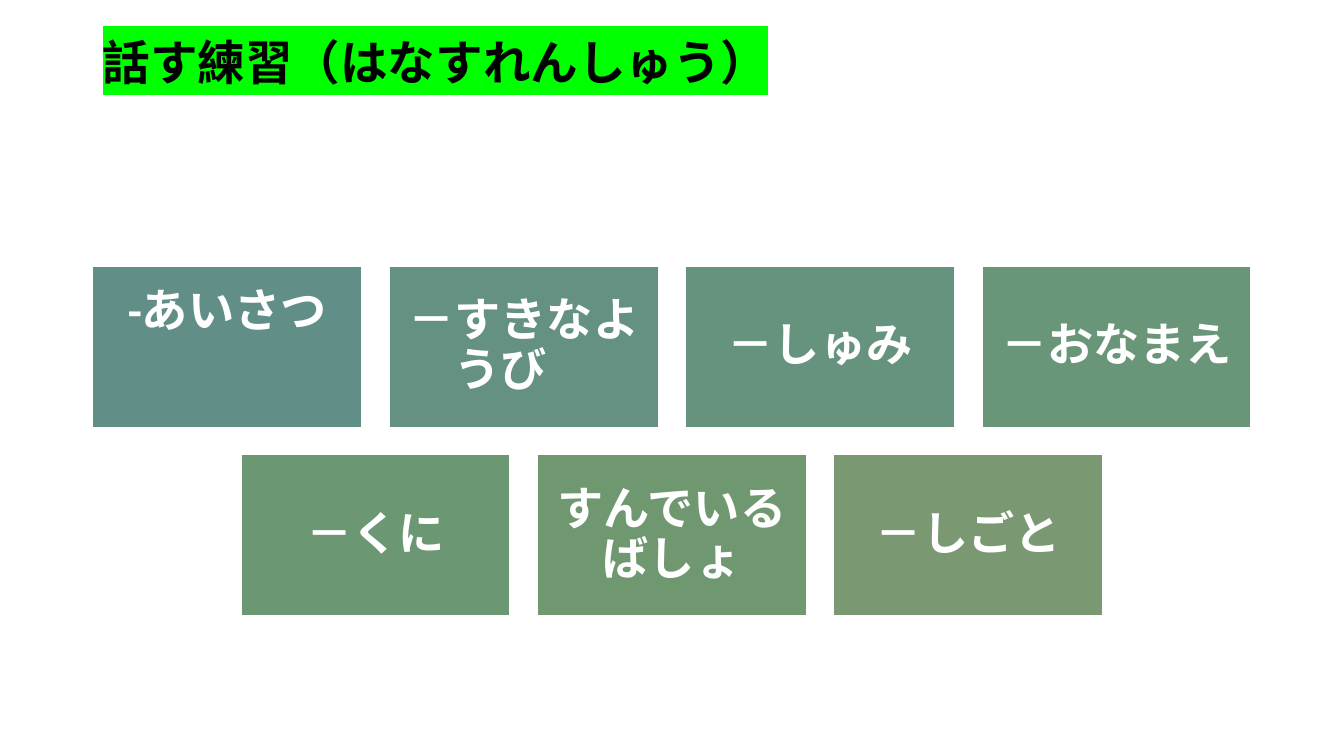
from lxml.etree import SubElement
from pptx import Presentation
from pptx.dml.color import RGBColor
from pptx.enum.shapes import MSO_SHAPE
from pptx.enum.text import MSO_ANCHOR, PP_ALIGN
from pptx.oxml.ns import qn
from pptx.util import Inches, Pt

# Content
TITLE = "話す練習（はなすれんしゅう）"
TOPIC_ROWS = [
    [("-あいさつ", "618F88"), ("－すきなようび　", "649182"),
     ("－しゅみ", "66937D"), ("－おなまえ", "699578")],
    [("－くに", "6C9773"), ("すんでいるばしょ", "709870"), ("－しごと", "7A9973")],
]
RAISED_TOPIC = "-あいさつ"

# Layout in inches
SLIDE_W, SLIDE_H = 13.33, 7.5
CARD_W, CARD_H, GAP = 2.67, 1.6, 0.27
CARDS_TOP = 2.64
INSET, RAISED_INSET = 0.14, 0.82


def color(hex_string):
    return RGBColor.from_string(hex_string)


def style_font(font, size, hex_string):
    font.name, font.size, font.bold = "Calibri", Pt(size), True
    font.color.rgb = color(hex_string)


def add_title(slide):
    title = slide.shapes.add_textbox(Inches(0.92), Inches(0.06), Inches(11.49), Inches(1.18))
    frame = title.text_frame
    frame.word_wrap = True
    frame.vertical_anchor = MSO_ANCHOR.MIDDLE
    paragraph = frame.paragraphs[0]
    paragraph.line_spacing = 0.9
    run = paragraph.add_run()
    run.text = TITLE
    style_font(run.font, 34, "000000")
    # The highlight belongs directly after the text fill
    properties = run.font._element
    highlight = SubElement(properties, qn("a:highlight"))
    SubElement(highlight, qn("a:srgbClr"), val="00FF00")
    properties.find(qn("a:solidFill")).addnext(highlight)


def add_card(slide, topic, fill, left, top):
    card = slide.shapes.add_shape(
        MSO_SHAPE.RECTANGLE, Inches(left), Inches(top), Inches(CARD_W), Inches(CARD_H))
    card.shadow.inherit = False
    card.fill.solid()
    card.fill.fore_color.rgb = color(fill)
    card.line.color.rgb = color("FFFFFF")
    card.line.width = Pt(1)
    frame = card.text_frame
    frame.word_wrap = True
    frame.vertical_anchor = MSO_ANCHOR.MIDDLE
    frame.margin_left = frame.margin_right = frame.margin_top = Inches(INSET)
    frame.margin_bottom = Inches(RAISED_INSET if topic == RAISED_TOPIC else INSET)
    paragraph = frame.paragraphs[0]
    paragraph.text = topic
    paragraph.alignment = PP_ALIGN.CENTER
    paragraph.line_spacing = 0.9
    style_font(paragraph.font, 33, "FFFFFF")


def main():
    prs = Presentation()
    prs.slide_width, prs.slide_height = Inches(SLIDE_W), Inches(SLIDE_H)
    slide = prs.slides.add_slide(prs.slide_layouts[6])
    add_title(slide)

    # Each row of cards is centred on the slide
    for row, topics in enumerate(TOPIC_ROWS):
        row_width = len(topics) * (CARD_W + GAP) - GAP
        row_left = (SLIDE_W - row_width) / 2
        for column, (topic, fill) in enumerate(topics):
            add_card(slide, topic, fill,
                     row_left + column * (CARD_W + GAP), CARDS_TOP + row * (CARD_H + GAP))

    prs.save("out.pptx")


if __name__ == "__main__":
    main()
